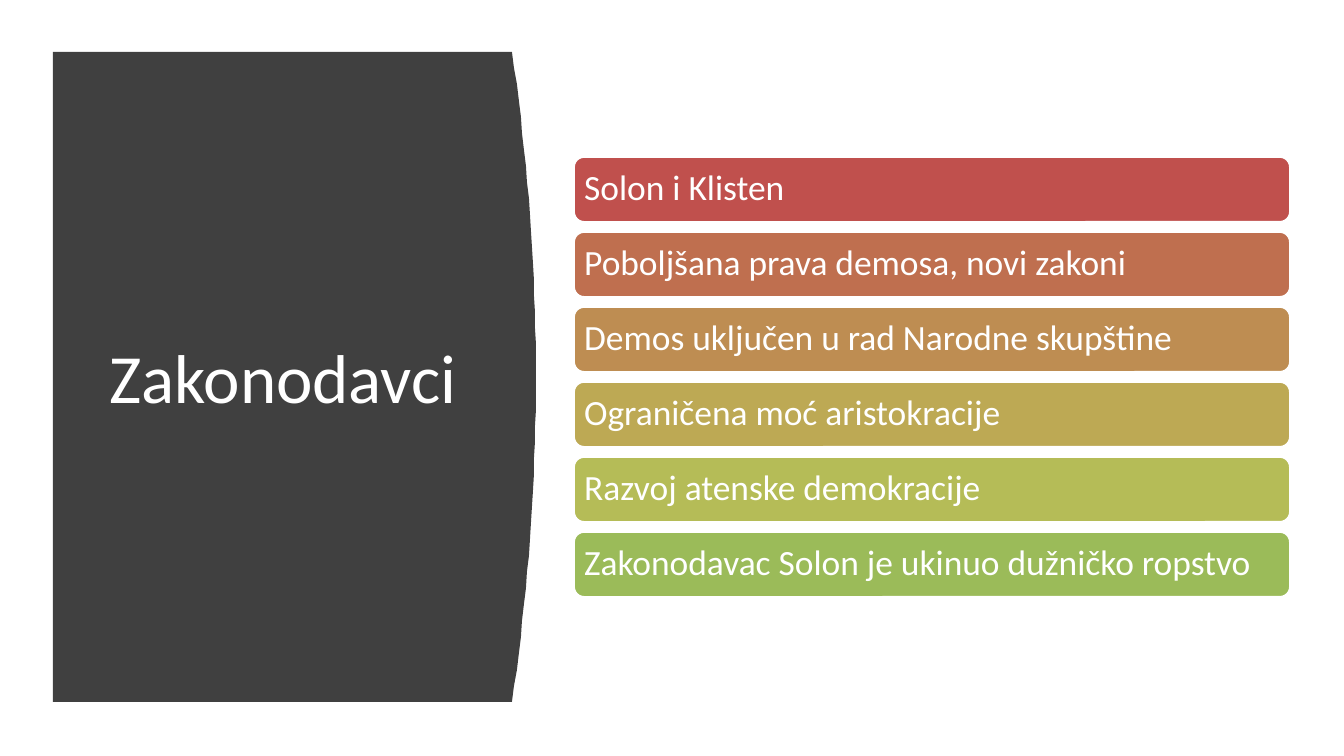
from pptx import Presentation
from pptx import util as u
from pptx.dml.color import RGBColor
from pptx.enum import shapes, text

TITLE = "Zakonodavci"
BARS = [
    ("Solon i Klisten", "C0504D"),
    ("Poboljšana prava demosa, novi zakoni", "BF6F4F"),
    ("Demos uključen u rad Narodne skupštine", "BE8D52"),
    ("Ograničena moć aristokracije", "BDA954"),
    ("Razvoj atenske demokracije", "B5BC57"),
    ("Zakonodavac Solon je ukinuo dužničko ropstvo", "9BBB59"),
]
THEME = {"font": "Calibri", "panel": "404040", "light": "FFFFFF",
         "title": 37, "bar": 19, "line": 2}
SCALE = 914400 / 134.4
WIDE, HIGH = 1344, 756
PANEL = {"left": 53, "top": 52, "right": 512, "base": 702, "bulge": 24}
STEPS = 40
BAR = {"left": 573, "top": 156, "width": 718, "high": 67, "pitch": 75}


def px(n):
    return u.Emu(round(n * SCALE))


def color(code):
    return RGBColor.from_string(code)


def put(shape, words, size, align, inset=None, space=1.0):
    frame = shape.text_frame
    frame.word_wrap = True
    frame.auto_size = text.MSO_AUTO_SIZE.NONE
    frame.vertical_anchor = text.MSO_ANCHOR.MIDDLE
    if inset is not None:
        frame.margin_left = frame.margin_right = px(inset)
        frame.margin_top = frame.margin_bottom = px(inset)
    para = frame.paragraphs[0]
    para.alignment = align
    para.line_spacing = space
    run = para.add_run()
    run.text = words
    run.font.name = THEME["font"]
    run.font.size = u.Pt(size)
    run.font.color.rgb = color(THEME["light"])


def paint(shape, fill):
    shape.shadow.inherit = False
    shape.fill.solid()
    shape.fill.fore_color.rgb = color(fill)


def panel(slide):
    p = PANEL
    edge = []
    for i in range(STEPS + 1):
        t = i / STEPS
        x = p["right"] + p["bulge"] * (1 - (2 * t - 1) ** 2)
        edge.append((x, p["top"] + t * (p["base"] - p["top"])))
    path = slide.shapes.build_freeform(p["left"], p["top"], SCALE)
    path.add_line_segments(edge + [(p["left"], p["base"])], close=True)
    shape = path.convert_to_shape()
    paint(shape, THEME["panel"])
    shape.line.fill.background()


def bars(slide):
    for i, (words, fill) in enumerate(BARS):
        shape = slide.shapes.add_shape(
            shapes.MSO_SHAPE.ROUNDED_RECTANGLE,
            px(BAR["left"]), px(BAR["top"] + i * BAR["pitch"]),
            px(BAR["width"]), px(BAR["high"]))
        paint(shape, fill)
        shape.line.color.rgb = color(THEME["light"])
        shape.line.width = u.Pt(THEME["line"])
        put(shape, words, THEME["bar"], text.PP_ALIGN.LEFT, inset=8, space=0.9)


def main():
    deck = Presentation()
    deck.slide_width, deck.slide_height = px(WIDE), px(HIGH)
    slide = deck.slides.add_slide(deck.slide_layouts[5])
    panel(slide)
    title = slide.shapes.title
    title.left, title.top, title.width, title.height = map(px, (95, 112, 376, 528))
    slide.shapes._spTree.append(title._element)
    put(title, TITLE, THEME["title"], text.PP_ALIGN.CENTER)
    bars(slide)
    deck.save("out.pptx")


if __name__ == "__main__":
    main()
